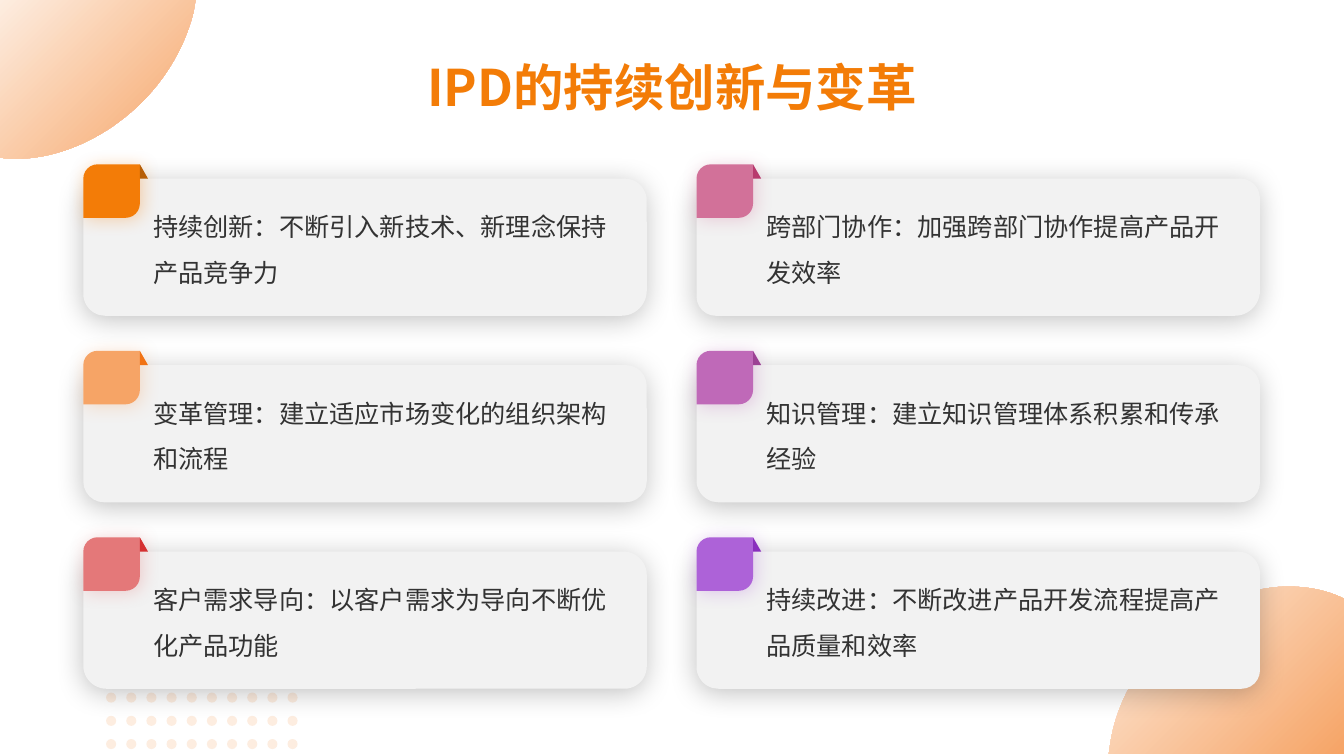
"""Build the slide on continuous innovation and change in IPD."""
from dataclasses import dataclass

from lxml import etree
from pptx import Presentation, util as u
from pptx.dml.color import RGBColor
from pptx.enum import shapes, text
from pptx.oxml.ns import qn


@dataclass(frozen=True)
class Theme:
    font: str = "Noto Sans CJK SC"
    title_size: int = 36
    body_size: int = 18
    accent: str = "F37C07"
    peach: str = "F6A466"
    cream: str = "FDEDE0"
    panel: str = "F2F2F2"
    ink: str = "333333"
    black: str = "000000"


theme = Theme()
deck = Presentation()
deck.slide_width, deck.slide_height = u.Pt(960), u.Pt(540)
slide = deck.slides.add_slide(deck.slide_layouts[5])


def place(preset, box, colour, adjust=(), shadow=None):
    """Add a borderless preset shape, with an optional outer shadow."""
    part = slide.shapes.add_shape(preset, *map(u.Pt, box))
    part.fill.solid()
    part.fill.fore_color.rgb = RGBColor.from_string(colour)
    part.line.fill.background()
    for i, value in enumerate(adjust):
        part.adjustments[i] = value
    part.shadow.inherit = False
    if shadow:
        tint, alpha, blur, distance, angle = shadow
        effects = part._element.spPr.find(qn("a:effectLst"))
        outer = etree.SubElement(
            effects, qn("a:outerShdw"), blurRad=str(u.Pt(blur)), dist=str(u.Pt(distance)),
            dir=str(angle * 60000), algn="ctr", rotWithShape="0")
        shade = etree.SubElement(outer, qn("a:srgbClr"), val=tint)
        etree.SubElement(shade, qn("a:alpha"), val=str(alpha * 1000))


def write(holder, wording, colour, frame_format, paragraph_format, font_format):
    """Fill a text holder with one formatted paragraph."""
    frame = holder.text_frame
    paragraph = frame.paragraphs[0]
    run = paragraph.add_run()
    run.text = wording
    for target, values in ((frame, frame_format), (paragraph, paragraph_format),
                           (run.font, font_format)):
        for key, value in values.items():
            setattr(target, key, value)
    run.font.color.rgb = RGBColor.from_string(colour)
    etree.SubElement(run._r.get_or_add_rPr(), qn("a:ea"), typeface=theme.font)


corner_blobs = [
    [[(0, 0)], [(139.68, 0)], [(138.24, 8.64)],
     [(132.48, 31.68), (119.52, 55.44), (99.36, 74.88)],
     [(70.56, 102.24), (34.56, 115.92), (2.88, 113.04)], [(0, 112.32)]],
    [[(920.16, 419.04)], [(933.12, 419.04), (945.36, 421.2), (956.88, 426.24)],
     [(960, 427.68)], [(960, 538.56)], [(792, 538.56)], [(792.72, 533.52)],
     [(796.32, 506.16), (810, 478.8), (833.04, 457.2)],
     [(858.96, 432.72), (891.36, 419.04), (920.16, 419.04)]],
]
curve_steps = 24
for blob in corner_blobs:
    outline = [blob[0][0]]
    for segment in blob[1:]:
        if len(segment) == 1:
            outline += segment
            continue
        bezier = [outline[-1], *segment]
        for step in range(1, curve_steps + 1):
            t = step / curve_steps
            weights = ((1 - t) ** 3, 3 * t * (1 - t) ** 2, 3 * t * t * (1 - t), t ** 3)
            outline.append(tuple(sum(w * point[axis] for w, point in zip(weights, bezier))
                                 for axis in (0, 1)))
    corners = [(u.Pt(x), u.Pt(y)) for x, y in outline]
    builder = slide.shapes.build_freeform(*corners[0])
    builder.add_line_segments(corners[1:])
    corner = builder.convert_to_shape()
    corner.fill.gradient()
    corner.fill.gradient_angle = 315
    for stop, colour in zip(corner.fill.gradient_stops, (theme.cream, theme.peach)):
        stop.color.rgb = RGBColor.from_string(colour)
    corner.line.fill.background()
    corner.shadow.inherit = False

for column in range(10):
    for row in range(4):
        place(shapes.MSO_SHAPE.OVAL,
              (75.8 + 14.4 * column, 478.1 + 16.6 * row, 7.2, 7.2), theme.cream)

heading = slide.shapes.title
heading.left, heading.top, heading.width, heading.height = map(u.Pt, (48, 36, 864, 51))
write(heading, "IPD的持续创新与变革", theme.accent,
      dict(vertical_anchor=text.MSO_ANCHOR.MIDDLE, word_wrap=True,
           auto_size=text.MSO_AUTO_SIZE.NONE),
      dict(alignment=text.PP_ALIGN.CENTER),
      dict(name=theme.font, size=u.Pt(theme.title_size), bold=True))

measures = [
    ("持续创新：不断引入新技术、新理念保持产品竞争力", theme.accent, "B65D05", (0.184, 0.16)),
    ("跨部门协作：加强跨部门协作提高产品开发效率", "D27199", "B83A6E", (0.184, 0.141)),
    ("变革管理：建立适应市场变化的组织架构和流程", theme.peach, "F17314", (0.154, 0.151)),
    ("知识管理：建立知识管理体系积累和传承经验", "BF69B8", "9C4294", (0.144, 0.16)),
    ("客户需求导向：以客户需求为导向不断优化产品功能", "E47879", "D53031", (0.163, 0.17)),
    ("持续改进：不断改进产品开发流程提高产品质量和效率", "AD62D8", "892FBD", (0.135, 0.16)),
]
card_text = dict(word_wrap=True, vertical_anchor=text.MSO_ANCHOR.MIDDLE,
                 margin_left=u.Pt(7.2), margin_right=u.Pt(7.2),
                 margin_top=0, margin_bottom=u.Pt(8.64))
for i, (wording, tab_colour, fold_colour, rounding) in enumerate(measures):
    row, column = divmod(i, 2)
    x, y = 59.5 + 438 * column, 127.6 + 133.2 * row
    place(shapes.MSO_SHAPE.ROUND_2_DIAG_RECTANGLE, (x, y, 402.5, 98), theme.panel,
          rounding, (theme.black, 23, 20, 3, 107))
    place(shapes.MSO_SHAPE.ROUND_2_DIAG_RECTANGLE, (x, y - 10.2, 40.4, 38.2), tab_colour,
          (0.267, 0), (tab_colour, 31, 13, 2, 45))
    place(shapes.MSO_SHAPE.RIGHT_TRIANGLE, (x + 40.4, y - 10.2, 5.8, 10.2), fold_colour)
    caption = slide.shapes.add_textbox(*map(u.Pt, (x + 42.8, y + 4.9, 344.2, 89.3)))
    write(caption, wording, theme.ink, card_text, dict(line_spacing=1.5),
          dict(name=theme.font, size=u.Pt(theme.body_size)))

deck.save("out.pptx")
